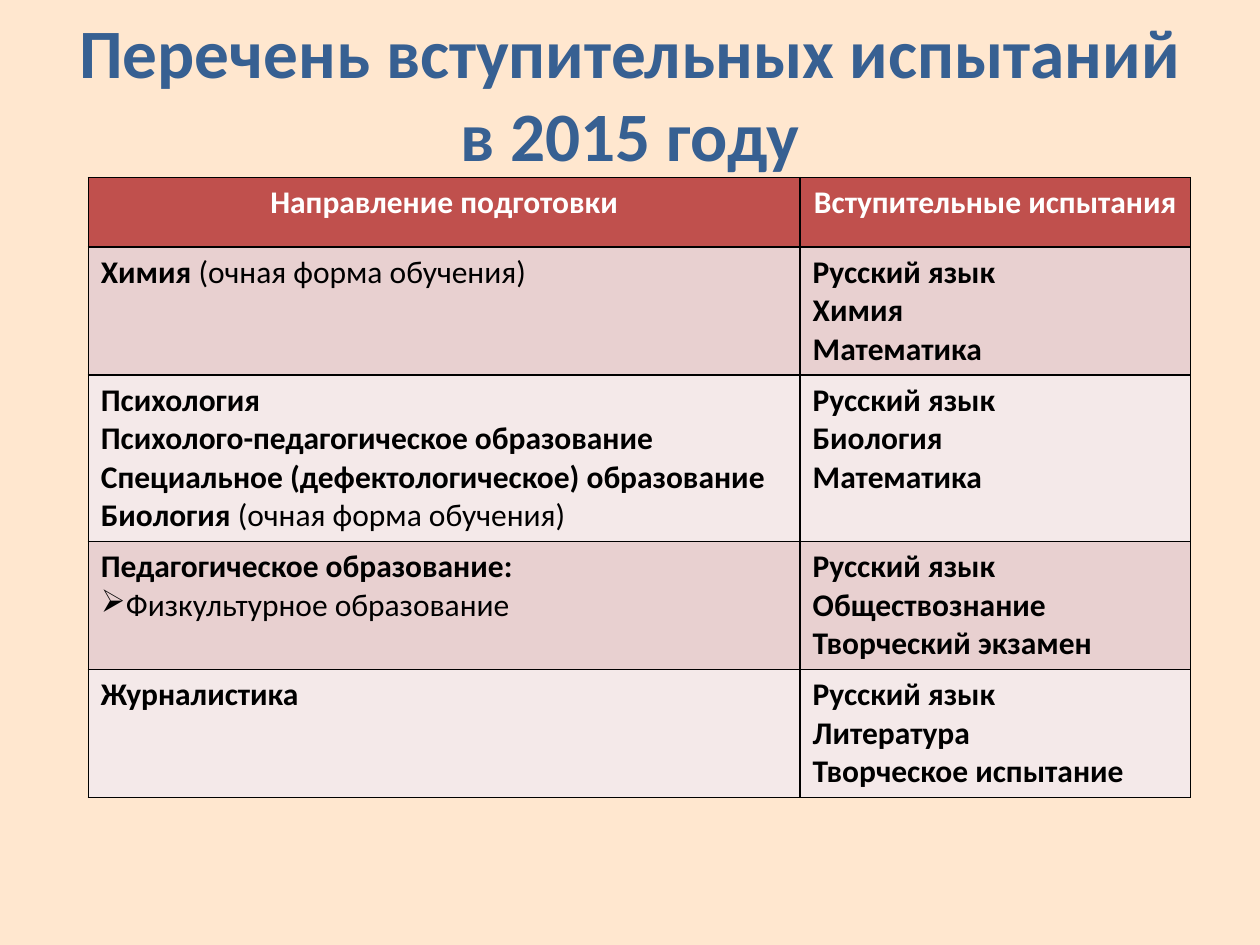
from dataclasses import dataclass

from lxml.etree import SubElement
from pptx import Presentation
from pptx.dml.color import RGBColor
from pptx.enum.text import MSO_ANCHOR, MSO_AUTO_SIZE, PP_ALIGN
from pptx.oxml.ns import qn
from pptx.util import Cm, Pt


@dataclass(frozen=True)
class Theme:
    font: str = "Calibri"
    title_size: float = 39.6
    table_size: float = 18
    background: str = "FFE7CF"
    title: str = "376092"
    header: str = "C0504D"
    header_text: str = "FFFFFF"
    text: str = "000000"
    border: str = "000000"
    bands: tuple = ("E8D0D0", "F4E9E9")


# Each cell is a list of paragraphs: (bold part, regular part, bullet)
def bold(*lines):
    return [(line, "", None) for line in lines]


FULL_TIME = "(очная форма обучения)"
HEADER = [bold("Направление подготовки"), bold("Вступительные испытания")]
ROWS = [
    [[("Химия ", FULL_TIME, None)],
     bold("Русский язык", "Химия", "Математика")],
    [bold("Психология", "Психолого-педагогическое образование",
          "Специальное (дефектологическое) образование")
     + [("Биология ", FULL_TIME, None)],
     bold("Русский язык", "Биология", "Математика")],
    [bold("Педагогическое образование:")
     + [("", "Физкультурное образование", "➢")],
     bold("Русский язык", "Обществознание", "Творческий экзамен")],
    [bold("Журналистика"),
     bold("Русский язык", "Литература", "Творческое испытание")],
]
COLUMN_WIDTHS = (14.35, 7.87)
ROW_HEIGHTS = (1.4, 2.51, 3.35, 2.51, 2.51)


class SlideBuilder:
    def __init__(self, prs, theme):
        self.theme = theme
        self.s = prs.slides.add_slide(prs.slide_layouts[5])
        fill = self.s.background.fill
        fill.solid()
        fill.fore_color.rgb = RGBColor.from_string(theme.background)

    def style_run(self, r, size, color, is_bold=True):
        r.font.name = self.theme.font
        r.font.size = Pt(size)
        r.font.bold = is_bold
        r.font.color.rgb = RGBColor.from_string(color)

    def title(self, text, left, top, width, height):
        sp = self.s.shapes.title
        sp.left, sp.top, sp.width, sp.height = map(Cm, (left, top, width, height))
        tf = sp.text_frame
        tf.text = text
        tf.word_wrap = True
        tf.auto_size = MSO_AUTO_SIZE.NONE
        tf.vertical_anchor = MSO_ANCHOR.MIDDLE
        p = tf.paragraphs[0]
        p.alignment = PP_ALIGN.CENTER
        self.style_run(p.runs[0], self.theme.title_size, self.theme.title)

    def borders(self, cell):
        tcPr = cell._tc.get_or_add_tcPr()
        for side in ("lnL", "lnR", "lnT", "lnB"):
            ln = SubElement(tcPr, qn(f"a:{side}"), w=str(Pt(1)))
            fill = SubElement(ln, qn("a:solidFill"))
            SubElement(fill, qn("a:srgbClr"), val=self.theme.border)

    def cell(self, cell, paragraphs, fill, color, align):
        self.borders(cell)
        cell.fill.solid()
        cell.fill.fore_color.rgb = RGBColor.from_string(fill)
        tf = cell.text_frame
        for i, (strong, regular, bullet) in enumerate(paragraphs):
            p = tf.add_paragraph() if i else tf.paragraphs[0]
            p.alignment = align
            if bullet:
                SubElement(p._p.get_or_add_pPr(), qn("a:buChar"), char=bullet)
            for text, is_bold in ((strong, True), (regular, False)):
                if text:
                    r = p.add_run()
                    r.text = text
                    self.style_run(r, self.theme.table_size, color, is_bold)

    def table(self, header, rows, left, top, widths, heights):
        frame = self.s.shapes.add_table(
            len(heights), len(widths), Cm(left), Cm(top),
            Cm(sum(widths)), Cm(sum(heights)))
        table = frame.table
        for column, width in zip(table.columns, widths):
            column.width = Cm(width)
        for row, height in zip(table.rows, heights):
            row.height = Cm(height)
        t = self.theme
        for i, row in enumerate([header] + rows):
            if i == 0:
                style = (t.header, t.header_text, PP_ALIGN.CENTER)
            else:
                style = (t.bands[(i - 1) % 2], t.text, PP_ALIGN.LEFT)
            for j, paragraphs in enumerate(row):
                self.cell(table.cell(i, j), paragraphs, *style)


def main():
    prs = Presentation()
    prs.slide_width, prs.slide_height = Cm(25.4), Cm(19.05)
    slide = SlideBuilder(prs, Theme())

    # Heading
    slide.title("Перечень вступительных испытаний в 2015 году",
                1.27, 0.76, 22.86, 2.21)

    # Programmes and their entrance exams
    slide.table(HEADER, ROWS, 1.78, 3.58, COLUMN_WIDTHS, ROW_HEIGHTS)

    prs.save("out.pptx")


if __name__ == "__main__":
    main()
